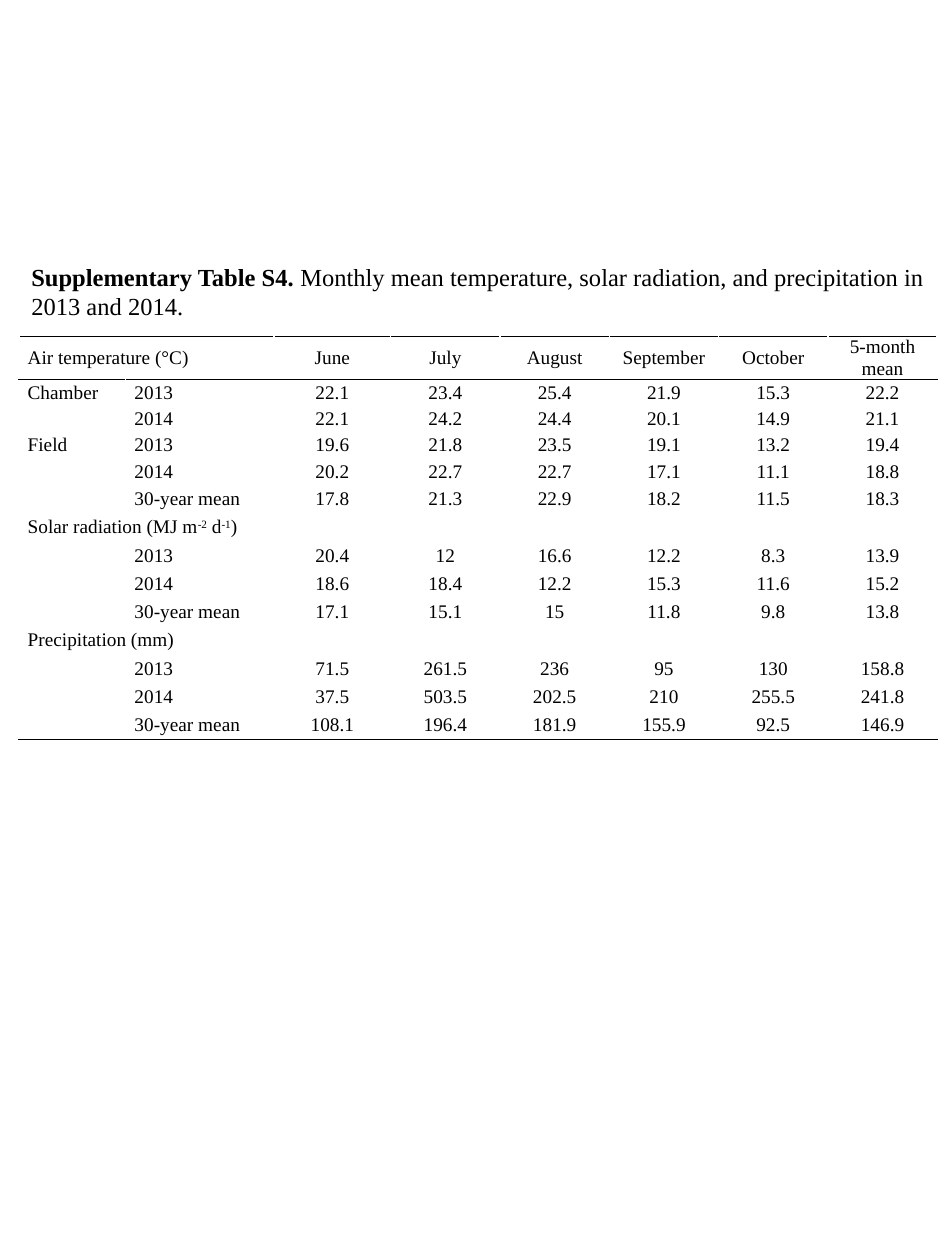
from dataclasses import dataclass

from lxml import etree
from pptx import Presentation
from pptx.dml.color import RGBColor
from pptx.enum.text import MSO_ANCHOR, PP_ALIGN
from pptx.oxml.ns import qn
from pptx.util import Inches, Pt

LEFT, CENTER = PP_ALIGN.LEFT, PP_ALIGN.CENTER
MIDDLE = MSO_ANCHOR.MIDDLE


@dataclass(frozen=True)
class Theme:
    font: str = "Times New Roman"
    ink: str = "000000"
    title_size: int = 14
    body_size: int = 11
    rule_width: int = 1


THEME = Theme()

COLUMN_WIDTHS = [0.85, 1.18, 0.93] + [0.87] * 5
ROW_HEIGHTS = [0.34] + [0.21] * 4 + [0.225] * 9

# Text between ^ marks is superscript
ROWS = [
    ["Air temperature (°C)", "", "June", "July", "August", "September", "October", "5-month mean"],
    ["Chamber", "2013", "22.1", "23.4", "25.4", "21.9", "15.3", "22.2"],
    ["", "2014", "22.1", "24.2", "24.4", "20.1", "14.9", "21.1"],
    ["Field", "2013", "19.6", "21.8", "23.5", "19.1", "13.2", "19.4"],
    ["", "2014", "20.2", "22.7", "22.7", "17.1", "11.1", "18.8"],
    ["", "30-year mean", "17.8", "21.3", "22.9", "18.2", "11.5", "18.3"],
    ["Solar radiation (MJ m^-2^ d^-1^)"] + [""] * 7,
    ["", "2013", "20.4", "12", "16.6", "12.2", "8.3", "13.9"],
    ["", "2014", "18.6", "18.4", "12.2", "15.3", "11.6", "15.2"],
    ["", "30-year mean", "17.1", "15.1", "15", "11.8", "9.8", "13.8"],
    ["Precipitation (mm)"] + [""] * 7,
    ["", "2013", "71.5", "261.5", "236", "95", "130", "158.8"],
    ["", "2014", "37.5", "503.5", "202.5", "210", "255.5", "241.8"],
    ["", "30-year mean", "108.1", "196.4", "181.9", "155.9", "92.5", "146.9"],
]


def set_font(p, size):
    p.font.name = THEME.font
    p.font.size = Pt(size)
    p.font.color.rgb = RGBColor.from_string(THEME.ink)


def add_rules(cell, sides):
    """Draw the given edges of a cell; lines must precede the fill."""
    tc_pr = cell._tc.get_or_add_tcPr()
    for i, side in enumerate(sides):
        ln = etree.Element(qn(f"a:ln{side}"), w=str(Pt(THEME.rule_width)))
        fill = etree.SubElement(ln, qn("a:solidFill"))
        etree.SubElement(fill, qn("a:srgbClr"), val=THEME.ink)
        tc_pr.insert(i, ln)


def fill_cell(cell, text, align):
    cell.fill.background()
    cell.vertical_anchor = MIDDLE
    cell.margin_left = cell.margin_right = Inches(0.07)
    cell.margin_top = cell.margin_bottom = 0
    p = cell.text_frame.paragraphs[0]
    p.alignment = align
    set_font(p, THEME.body_size)
    for i, part in enumerate(text.split("^")):
        if part:
            r = p.add_run()
            r.text = part
            if i % 2:
                r._r.get_or_add_rPr().set("baseline", "30000")


def add_caption(slide, left, top, width, height):
    tf = slide.shapes.add_textbox(left, top, width, height).text_frame
    tf.word_wrap = True
    p = tf.paragraphs[0]
    set_font(p, THEME.title_size)
    label = p.add_run()
    label.text = "Supplementary Table S4. "
    label.font.bold = True
    p.add_run().text = ("Monthly mean temperature, solar radiation, "
                        "and precipitation in 2013 and 2014.")


def add_climate_table(slide, left, top, width, height):
    table = slide.shapes.add_table(
        len(ROWS), len(COLUMN_WIDTHS), left, top, width, height).table
    table.first_row = table.horz_banding = False
    for column, size in zip(table.columns, COLUMN_WIDTHS):
        column.width = int(width * size / sum(COLUMN_WIDTHS))
    for row, size in zip(table.rows, ROW_HEIGHTS):
        row.height = int(height * size / sum(ROW_HEIGHTS))

    # Rules above and below the header, and under the last row
    rules = {0: "TB", 1: "T", len(ROWS) - 1: "B"}
    for i, values in enumerate(ROWS):
        for j, text in enumerate(values):
            cell = table.cell(i, j)
            fill_cell(cell, text, LEFT if j < 2 else CENTER)
            add_rules(cell, rules.get(i, ""))
        # Section headings span both label columns
        if values[0] and not values[1]:
            table.cell(i, 0).merge(table.cell(i, 1))


def main():
    prs = Presentation()
    prs.slide_width, prs.slide_height = Inches(7.5), Inches(10)
    slide = prs.slides.add_slide(prs.slide_layouts[6])
    left, width = Inches(0.15), Inches(7.29)
    add_climate_table(slide, left, Inches(2.67), width, Inches(3.2))
    add_caption(slide, left, Inches(2.03), width, Inches(0.57))
    prs.save("out.pptx")


if __name__ == "__main__":
    main()
